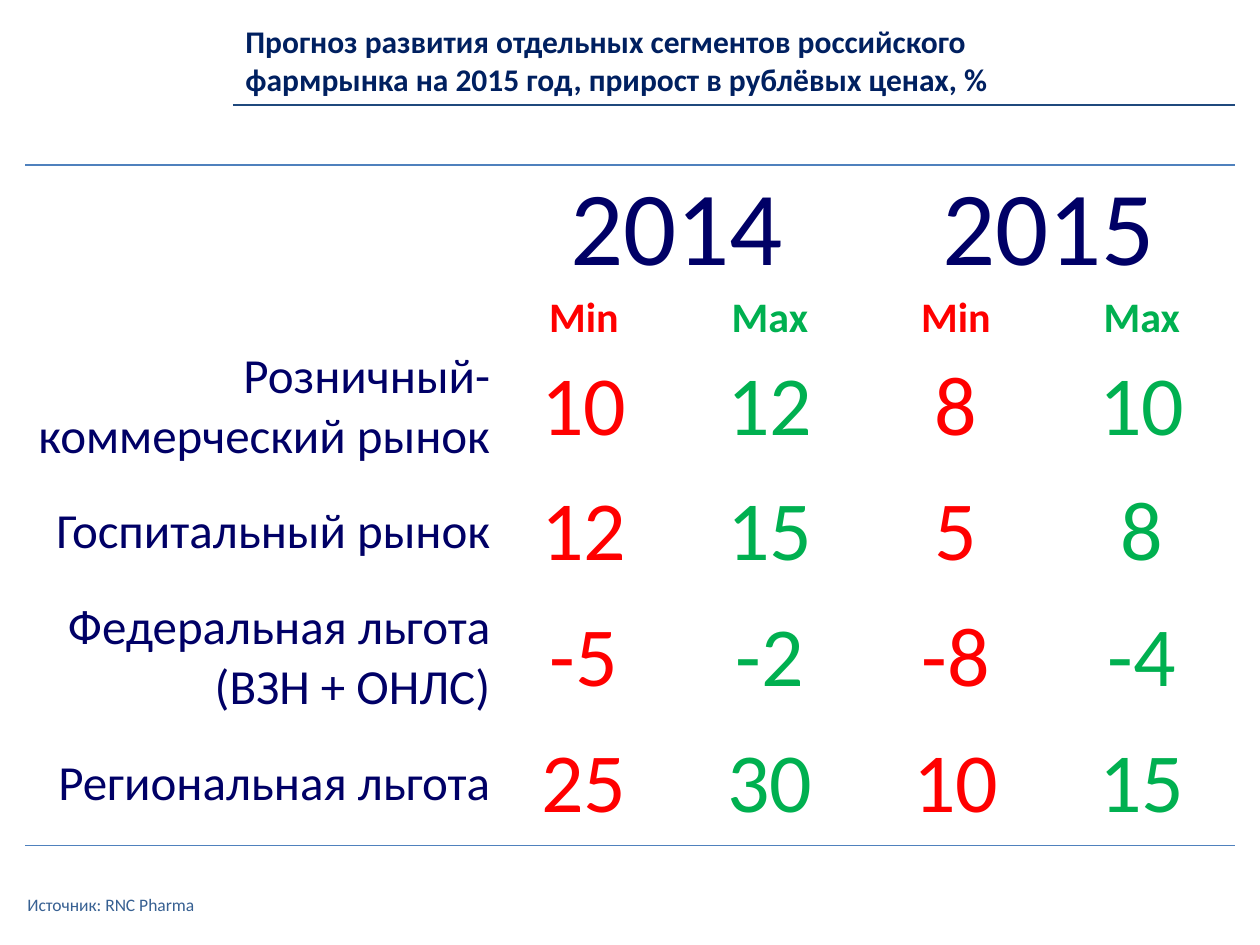
from dataclasses import dataclass

from lxml import etree
from pptx import Presentation
from pptx.dml.color import RGBColor
from pptx.enum import shapes, text
from pptx.oxml import ns
from pptx.util import Emu, Pt

PX = 914400 // 126


@dataclass(frozen=True)
class Theme:
    font: str = "Calibri"
    title: str = "002060"
    rule: str = "1F497D"
    border: str = "4F81BD"
    source: str = "376092"
    label: str = "000066"
    low: str = "FF0000"
    high: str = "00B050"
    title_size: int = 18
    source_size: int = 10
    year_size: int = 60
    bound_size: int = 24
    label_size: int = 28
    value_size: int = 48


THEME = Theme()
YEARS = ["2014", "2015"]
FORECAST = [
    ("Розничный-коммерческий рынок", [10, 12, 8, 10]),
    ("Госпитальный рынок", [12, 15, 5, 8]),
    ("Федеральная льгота (ВЗН + ОНЛС)", [-5, -2, -8, -4]),
    ("Региональная льгота", [25, 30, 10, 15]),
]
BOUNDS = [("Min", THEME.low), ("Max", THEME.high)] * len(YEARS)


def px(*lengths):
    return [Emu(n * PX) for n in lengths]


def write(tf, words, size, color, bold=False, align=text.PP_ALIGN.LEFT):
    tf.text = words
    p = tf.paragraphs[0]
    p.alignment = align
    font = p.runs[0].font
    font.name, font.size, font.bold = THEME.font, Pt(size), bold
    font.color.rgb = RGBColor.from_string(color)


def add_text(slide, box, words, size, color, bold=False,
             anchor=text.MSO_ANCHOR.TOP):
    tf = slide.shapes.add_textbox(*px(*box)).text_frame
    tf.word_wrap = True
    tf.vertical_anchor = anchor
    write(tf, words, size, color, bold)


def add_border(cell, side):
    ln = etree.Element(ns.qn(f"a:{side}"), w=str(Pt(1)))
    fill = etree.SubElement(ln, ns.qn("a:solidFill"))
    etree.SubElement(fill, ns.qn("a:srgbClr"), val=THEME.border)
    cell._tc.get_or_add_tcPr().insert(0, ln)


def fill_cell(cell, words, size, color, bold=False,
              align=text.PP_ALIGN.CENTER):
    cell.vertical_anchor = text.MSO_ANCHOR.MIDDLE
    cell.margin_left = cell.margin_right = cell.margin_top = Emu(PX)
    cell.margin_bottom = 0
    write(cell.text_frame, words, size, color, bold, align)


def add_header(slide, x, y, w, h):
    # Rule under the title, running on past the text
    rule = slide.shapes.add_connector(
        shapes.MSO_CONNECTOR.STRAIGHT, *px(x, y + h, x + 1002, y + h))
    rule.line.color.rgb = RGBColor.from_string(THEME.rule)
    rule.line.width = Pt(1.5)
    etree.SubElement(rule._element.spPr, ns.qn("a:effectLst"))
    add_text(slide, (x, y, w, h),
             "Прогноз развития отдельных сегментов российского "
             "фармрынка на 2015 год, прирост в рублёвых ценах, %",
             THEME.title_size, THEME.title, bold=True)


def add_forecast_table(slide, x, y, w, h):
    heights = [81, 42, 125, 125, 127, 125]
    label_w = 466
    value_w = (w - label_w) // len(BOUNDS)
    frame = slide.shapes.add_table(
        len(heights), len(BOUNDS) + 1, *px(x, y, w, h))
    table = frame.table
    table.first_row = table.horz_banding = False
    # Plain style without a grid
    style = table._tbl.tblPr.find(ns.qn("a:tableStyleId"))
    style.text = "{2D5ABB26-0587-4C30-8999-92F81FD0307C}"
    for column, width in zip(table.columns, [label_w] + [value_w] * 4):
        column.width = Emu(width * PX)
    for row, height in zip(table.rows, heights):
        row.height = Emu(height * PX)
    frame.height = Emu(h * PX)

    for cell in table.iter_cells():
        cell.fill.background()

    # Years and their bounds
    table.cell(0, 0).merge(table.cell(1, 0))
    for i, year in enumerate(YEARS):
        col = 1 + 2 * i
        table.cell(0, col).merge(table.cell(0, col + 1))
        fill_cell(table.cell(0, col), year, THEME.year_size, THEME.label)
    for col, (bound, color) in enumerate(BOUNDS, 1):
        fill_cell(table.cell(1, col), bound, THEME.bound_size, color, True)

    # Market segments
    for row, (segment, values) in enumerate(FORECAST, 2):
        fill_cell(table.cell(row, 0), segment, THEME.label_size,
                  THEME.label, align=text.PP_ALIGN.RIGHT)
        for col, (value, (_, color)) in enumerate(zip(values, BOUNDS), 1):
            fill_cell(table.cell(row, col), str(value),
                      THEME.value_size, color)

    # Lines above and below the table
    for col in range(len(table.columns)):
        add_border(table.cell(0, col), "lnT")
        add_border(table.cell(len(heights) - 1, col), "lnB")


def add_source(slide, x, y, w, h):
    add_text(slide, (x, y, w, h), "Источник: RNC Pharma",
             THEME.source_size, THEME.source, anchor=text.MSO_ANCHOR.MIDDLE)


def main():
    prs = Presentation()
    prs.slide_width, prs.slide_height = px(1260, 945)
    slide = prs.slides.add_slide(prs.slide_layouts[6])
    add_header(slide, 233, 16, 903, 89)
    add_forecast_table(slide, 25, 165, 1210, 682)
    add_source(slide, 15, 880, 400, 50)
    prs.save("out.pptx")


if __name__ == "__main__":
    main()
